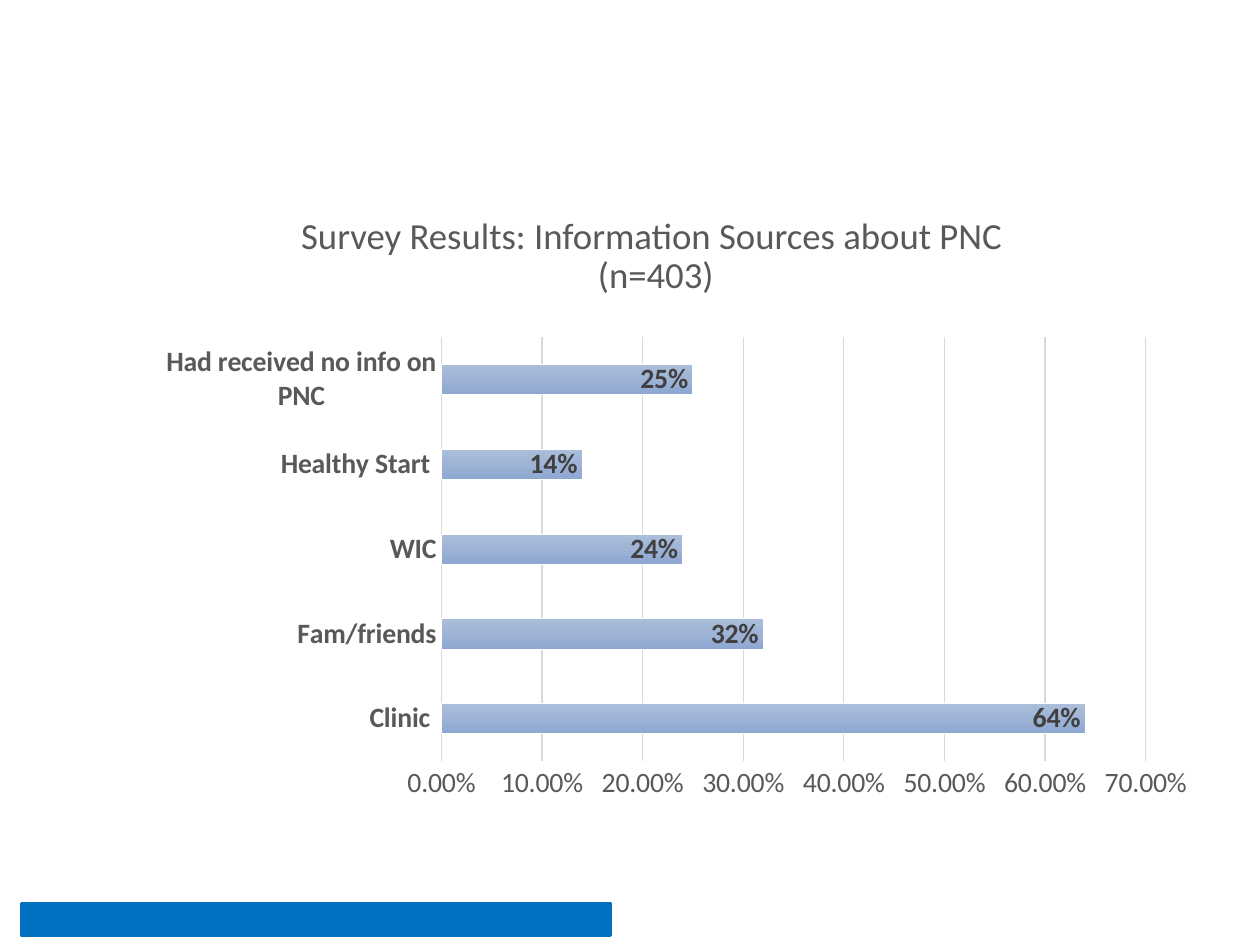
"""Build a slide with a bar chart of survey results on information sources."""
from copy import deepcopy

from lxml import etree
from pptx import Presentation
from pptx.chart.data import CategoryChartData
from pptx.dml.color import RGBColor
from pptx.enum.chart import XL_CHART_TYPE, XL_LABEL_POSITION, XL_TICK_MARK
from pptx.enum.shapes import MSO_SHAPE
from pptx.enum.text import MSO_ANCHOR, MSO_AUTO_SIZE, PP_ALIGN
from pptx.oxml.ns import qn
from pptx.util import Inches, Pt

BAR = XL_CHART_TYPE.BAR_CLUSTERED
INSIDE_END = XL_LABEL_POSITION.INSIDE_END
NO_TICK = XL_TICK_MARK.NONE
RECT = MSO_SHAPE.RECTANGLE
MIDDLE = MSO_ANCHOR.MIDDLE
NO_AUTOFIT = MSO_AUTO_SIZE.NONE
CENTER = PP_ALIGN.CENTER

FONT = "Calibri"
BLUE, GREY, DARK, GRID = "0070C0", "595959", "404040", "D9D9D9"
GRADIENT = [(0, "ABBEDB"), (0.5, "9EB3D5"), (1, "8CA7D2")]
SOURCES = [
    ("Clinic ", 0.64),
    ("Fam/friends", 0.32),
    ("WIC", 0.24),
    ("Healthy Start ", 0.14),
    ("Had received no info on PNC", 0.25),
]


def rgb(value):
    return RGBColor.from_string(value)


class SlideBuilder:
    def __init__(self, slide):
        self.s = slide

    def font(self, font, size, color, bold=False):
        font.name, font.size, font.bold = FONT, Pt(size), bold
        font.color.rgb = rgb(color)

    def line(self, line, color, width):
        line.color.rgb = rgb(color)
        line.width = Pt(width)

    def place(self, sp, x, y, w, h):
        sp.left, sp.top, sp.width, sp.height = map(Inches, (x, y, w, h))

    def band(self, x, y, w, h, color):
        sp = self.s.shapes.add_shape(RECT, *map(Inches, (x, y, w, h)))
        sp.shadow.inherit = False
        sp.fill.solid()
        sp.fill.fore_color.rgb = rgb(color)
        self.line(sp.line, color, 2)

    def title(self, lines, x, y, w, h):
        sp = self.s.shapes.title
        self.place(sp, x, y, w, h)
        tf = sp.text_frame
        tf.text = "\n".join(lines)
        tf.word_wrap = False
        tf.auto_size = NO_AUTOFIT
        tf.vertical_anchor = MIDDLE
        for p in tf.paragraphs:
            p.alignment = CENTER
            p.line_spacing = 0.9
            self.font(p.font, 21, GREY)

    def gradient(self, series, stops):
        fill = series.format.fill
        fill.gradient()
        fill.gradient_angle = 270
        stop_list = series._element.find(".//" + qn("a:gsLst"))
        stop_list.insert(1, deepcopy(stop_list[0]))
        for stop, (position, color) in zip(fill.gradient_stops, stops):
            stop.position = position
            stop.color.rgb = rgb(color)

    def plot_layout(self, chart, x, y, w, h):
        area = chart._chartSpace.find(".//" + qn("c:plotArea"))
        for old in area.findall(qn("c:layout")):
            area.remove(old)
        layout = etree.Element(qn("c:layout"))
        manual = etree.SubElement(layout, qn("c:manualLayout"))
        settings = {"layoutTarget": "inner", "xMode": "edge", "yMode": "edge",
                    "x": x, "y": y, "w": w, "h": h}
        for tag, value in settings.items():
            etree.SubElement(manual, qn("c:" + tag)).set("val", str(value))
        area.insert(0, layout)

    def bar_chart(self, rows, x, y, w, h):
        data = CategoryChartData(number_format="0.00%")
        data.categories = [name for name, _ in rows]
        data.add_series("Series 1", [value for _, value in rows])
        frame = self.s.shapes.add_chart(BAR, *map(Inches, (x, y, w, h)), data)
        chart = frame.chart
        chart.has_title = chart.has_legend = False
        self.font(chart.font, 10, "000000")
        self.plot_layout(chart, 0.3, 0, 0.67, 0.86)

        cat, val = chart.category_axis, chart.value_axis
        for axis in (cat, val):
            axis.major_tick_mark = axis.minor_tick_mark = NO_TICK
            self.font(axis.tick_labels.font, 16, GREY, bold=axis is cat)
        cat.has_major_gridlines = False
        self.line(cat.format.line, GRID, 0.75)
        val.minimum_scale, val.maximum_scale, val.major_unit = 0, 0.7, 0.1
        val.format.line.fill.background()
        val.has_major_gridlines = True
        self.line(val.major_gridlines.format.line, GRID, 0.75)
        val.tick_labels.number_format = "0.00%"
        val.tick_labels.number_format_is_linked = False

        plot = chart.plots[0]
        plot.gap_width = 182
        plot.vary_by_categories = False
        series = plot.series[0]
        self.gradient(series, GRADIENT)
        self.line(series.format.line, "FFFFFF", 0.5)
        labels = series.data_labels
        labels.show_value = True
        labels.position = INSIDE_END
        labels.number_format = "0%"
        labels.number_format_is_linked = False
        self.font(labels.font, 16, DARK, bold=True)


def main():
    prs = Presentation()
    prs.slide_width, prs.slide_height = Inches(10), Inches(7.5)
    b = SlideBuilder(prs.slides.add_slide(prs.slide_layouts[5]))
    b.band(0.17, 7.17, 4.67, 0.25, BLUE)
    b.bar_chart(SOURCES, 1, 2.67, 8.42, 3.92)
    b.title(["Survey Results: Information Sources about PNC ", "(n=403)"],
            2.26, 1.67, 5.89, 0.74)
    prs.save("out.pptx")


if __name__ == "__main__":
    main()
